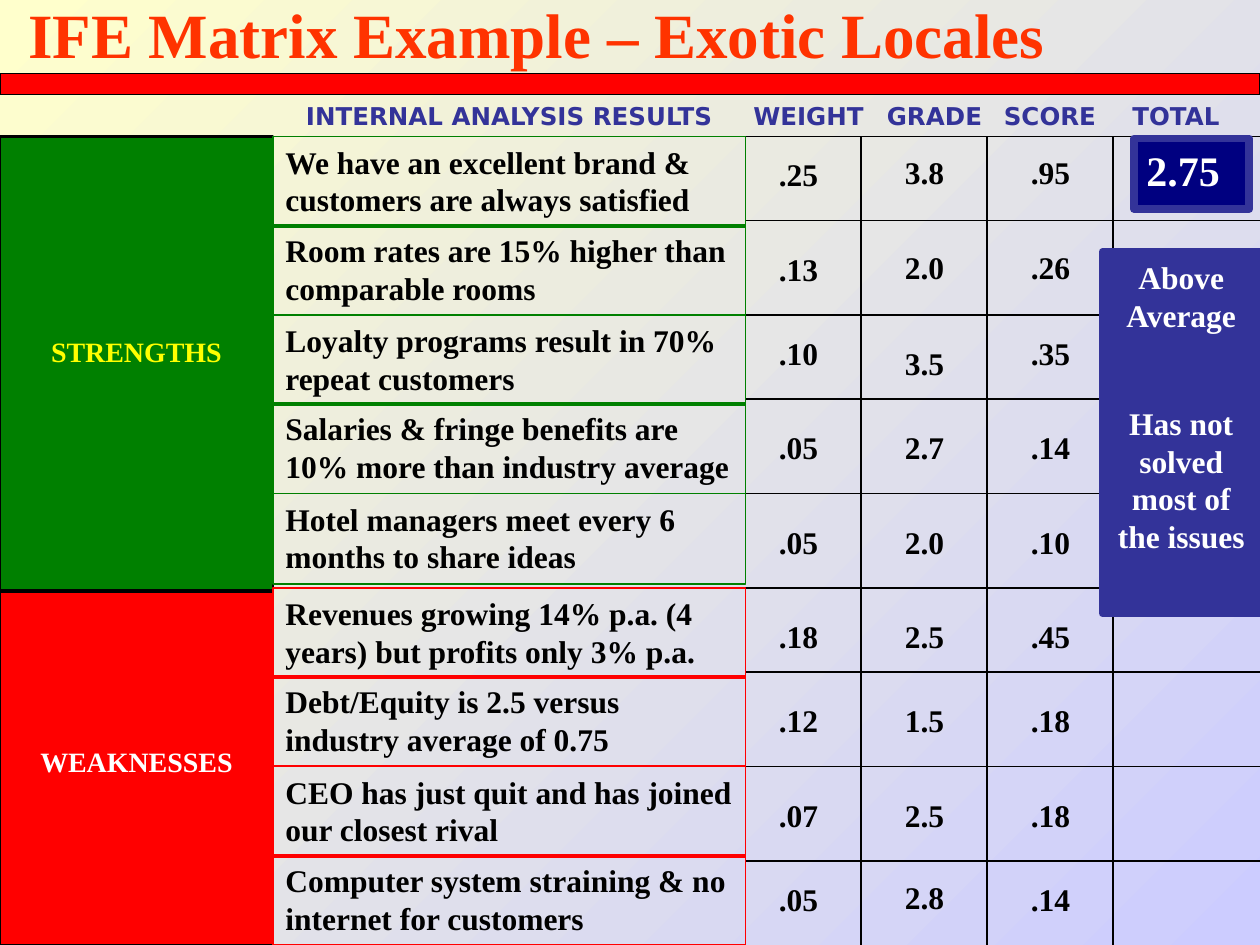
from typing import NamedTuple, Optional

from lxml import etree
from pptx import Presentation
from pptx.dml.color import RGBColor
from pptx.enum.shapes import MSO_CONNECTOR, MSO_SHAPE
from pptx.enum.text import MSO_ANCHOR, PP_ALIGN
from pptx.oxml.ns import qn
from pptx.util import Emu, Pt

RECT = MSO_SHAPE.RECTANGLE
STRAIGHT = MSO_CONNECTOR.STRAIGHT
LEFT, CENTER = PP_ALIGN.LEFT, PP_ALIGN.CENTER
TOP, MIDDLE = MSO_ANCHOR.TOP, MSO_ANCHOR.MIDDLE
PX = 7620  # 120 px to the inch
WIDE, HIGH = 1200, 900
SERIF, SANS = "Times New Roman", "DejaVu Sans"
COLORS = {
    "cream": "FFFFCC", "lilac": "CCCCFF", "orange": "FF3300", "red": "FF0000",
    "green": "008000", "yellow": "FFFF00", "white": "FFFFFF", "black": "000000",
    "indigo": "333399", "navy": "000080",
}


class Box(NamedTuple):
    x: int
    y: int
    w: int
    h: int


class Style(NamedTuple):
    size: int
    color: str
    font: str = SERIF
    align: PP_ALIGN = LEFT
    anchor: MSO_ANCHOR = TOP
    left: int = 12
    top: int = 6
    gap: int = 0


class Frame(NamedTuple):
    fill: Optional[str]
    line: str
    width: float


class Column(NamedTuple):
    x: int
    values: tuple[str, ...]
    tops: tuple[int, ...]


class Head(NamedTuple):
    text: str
    x: int
    w: int


class Fact(NamedTuple):
    text: str
    y: int
    color: str


BODY = Style(18, "black")
LABEL = Style(14, "indigo", SANS, CENTER)
HEADS = (
    Head("INTERNAL ANALYSIS RESULTS", 260, 450),
    Head("WEIGHT", 700, 140),
    Head("GRADE", 820, 140),
    Head("SCORE", 930, 140),
    Head("TOTAL", 1050, 140),
)
ROWS = (130, 210, 300, 380, 470, 560, 640, 730, 820)
RULES = (820, 940, 1060)
MID = (402, 492, 582, 662, 752)
COLUMNS = (
    Column(730, (".25", ".13", ".10", ".05", ".05", ".18", ".12", ".07", ".05"),
           (142, 232, 312, *MID, 832)),
    Column(850, ("3.8", "2.0", "3.5", "2.7", "2.0", "2.5", "1.5", "2.5", "2.8"),
           (140, 230, 322, *MID, 830)),
    Column(970, (".95", ".26", ".35", ".14", ".10", ".45", ".18", ".18", ".14"),
           (140, 230, 312, *MID, 832)),
)
FACTS = (
    Fact("We have an excellent brand & customers are always satisfied", 130, "green"),
    Fact("Room rates are 15% higher than comparable rooms", 214, "green"),
    Fact("Loyalty programs result in 70% repeat customers", 300, "green"),
    Fact("Salaries & fringe benefits are 10% more than industry average", 384, "green"),
    Fact("Hotel managers meet every 6 months to share ideas", 470, "green"),
    Fact("Revenues growing 14% p.a. (4 years) but profits only 3% p.a.", 560, "red"),
    Fact("Debt/Equity is 2.5 versus industry average of 0.75", 644, "red"),
    Fact("CEO has just quit and has joined our closest rival", 730, "red"),
    Fact("Computer system straining & no internet for customers", 814, "red"),
)


def px(n: int) -> Emu:
    return Emu(n * PX)


def rgb(name: str) -> RGBColor:
    return RGBColor.from_string(COLORS[name])


def write(shape, lines: tuple[str, ...], style: Style) -> None:
    frame = shape.text_frame
    frame.word_wrap = True
    frame.vertical_anchor = style.anchor
    frame.margin_left, frame.margin_right = px(style.left), px(12)
    frame.margin_top, frame.margin_bottom = px(style.top), px(6)
    for i, line in enumerate(lines):
        para = frame.add_paragraph() if i else frame.paragraphs[0]
        para.alignment = style.align
        para.space_before = Pt(style.gap if i else 0)
        run = para.add_run()
        run.text = line
        run.font.size = Pt(style.size)
        run.font.name = style.font
        run.font.bold = True
        run.font.color.rgb = rgb(style.color)


def add_text(slide, box: Box, text: str, style: Style) -> None:
    write(slide.shapes.add_textbox(*map(px, box)), (text,), style)


def add_rect(slide, box: Box, look: Frame, lines: tuple[str, ...] = (),
             style: Style = BODY) -> None:
    shape = slide.shapes.add_shape(RECT, *map(px, box))
    shape.shadow.inherit = False
    if look.fill:
        shape.fill.solid()
        shape.fill.fore_color.rgb = rgb(look.fill)
    else:
        shape.fill.background()
    shape.line.color.rgb = rgb(look.line)
    shape.line.width = Pt(look.width)
    if lines:
        write(shape, lines, style)


def add_rule(slide, x1: int, y1: int, x2: int, y2: int) -> None:
    rule = slide.shapes.add_connector(STRAIGHT, px(x1), px(y1), px(x2), px(y2))
    rule.line.color.rgb = rgb("black")
    rule.line.width = Pt(0.75)
    etree.SubElement(rule._element.spPr, qn("a:effectLst"))


def paint(slide) -> None:
    """Fill the background from the top left to the bottom right corner."""
    fill = slide.background.fill
    fill.gradient()
    fill.gradient_angle = 315
    for stop, name in zip(fill.gradient_stops, ("cream", "lilac")):
        stop.color.rgb = rgb(name)


def main() -> None:
    deck = Presentation()
    deck.slide_width, deck.slide_height = px(WIDE), px(HIGH)
    slide = deck.slides.add_slide(deck.slide_layouts[6])
    paint(slide)

    add_text(slide, Box(0, 0, 1020, 64), "IFE Matrix Example – Exotic Locales",
             Style(36, "orange", anchor=MIDDLE, left=27))
    add_rect(slide, Box(0, 70, WIDE, 20), Frame("red", "black", 0.75))
    add_rect(slide, Box(0, 130, 260, 432), Frame("green", "black", 1.5),
             ("STRENGTHS",), Style(16, "yellow", align=CENTER, top=189))
    add_rect(slide, Box(0, 564, 260, 336), Frame("red", "black", 1.5),
             ("WEAKNESSES",), Style(16, "white", align=CENTER, top=145))

    for head in HEADS:
        add_text(slide, Box(head.x, 90, head.w, 40), head.text, LABEL)
    for y in ROWS:
        add_rule(slide, 710, y, WIDE, y)
    for x in RULES:
        add_rule(slide, x, ROWS[0], x, HIGH)
    for col in COLUMNS:
        for value, y in zip(col.values, col.tops):
            add_text(slide, Box(col.x, y, 70, 48), value, BODY)

    add_rect(slide, Box(1080, 132, 110, 67), Frame("navy", "indigo", 4.5),
             ("2.75",), Style(24, "white"))
    add_rect(slide, Box(1050, 240, 150, 344), Frame("indigo", "indigo", 4.5),
             ("Above Average", "Has not solved most of the issues"),
             Style(18, "white", align=CENTER, gap=40))
    for fact in FACTS:
        add_rect(slide, Box(260, fact.y, 450, 86), Frame(None, fact.color, 1),
                 (fact.text,))
    deck.save("out.pptx")


if __name__ == "__main__":
    main()
